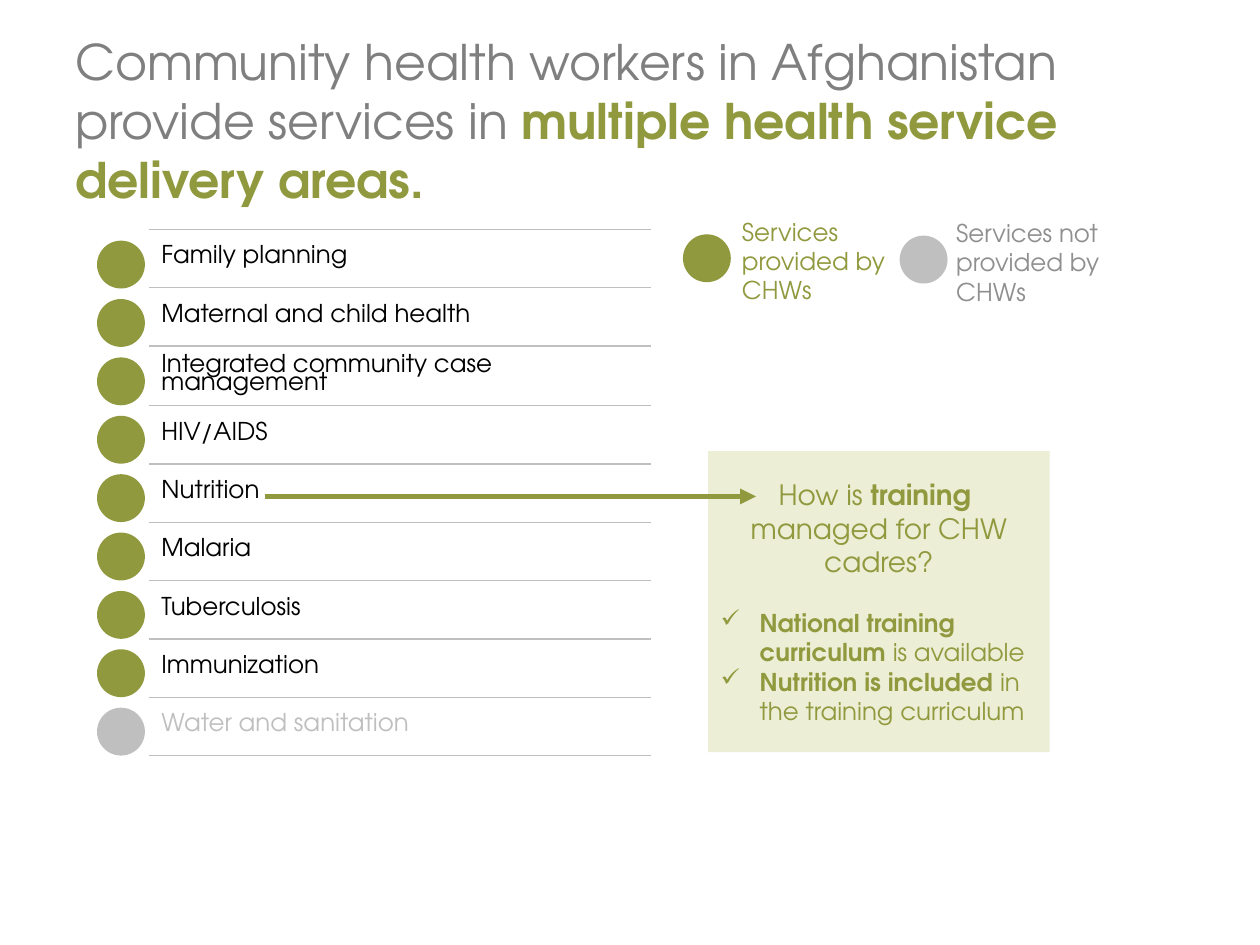
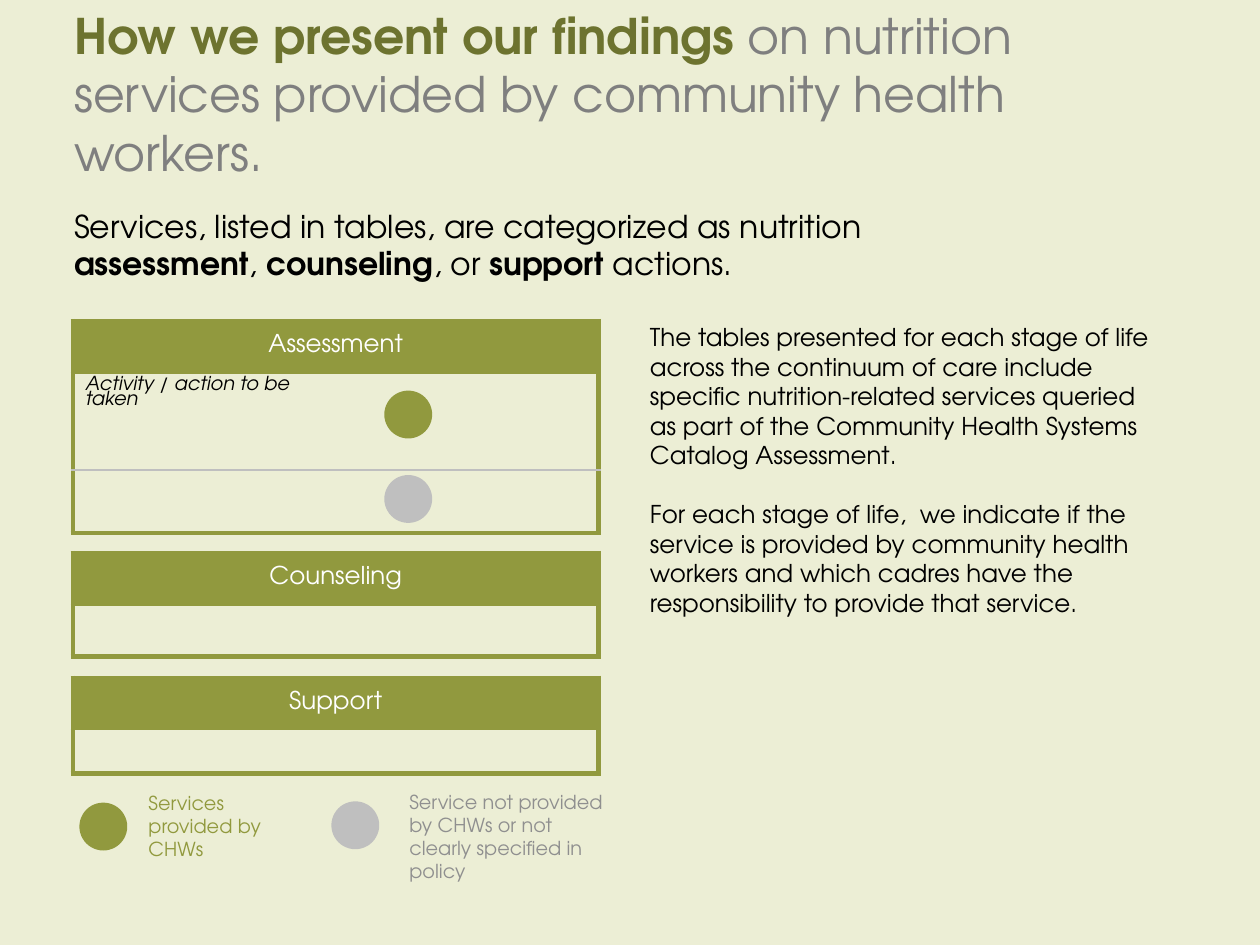
from dataclasses import dataclass

from pptx import Presentation
from pptx.dml.color import RGBColor
from pptx.enum.shapes import MSO_CONNECTOR, MSO_SHAPE
from pptx.enum.text import MSO_ANCHOR, PP_ALIGN
from pptx.oxml.ns import qn
from pptx.util import Inches, Pt
from lxml.etree import SubElement

WIDTH, HEIGHT = Inches(10), Inches(7.5)
COLUMN, ROW = WIDTH / 100, HEIGHT / 75  # grid of 100 columns by 75 rows
FONT = "TeX Gyre Adventor"
GREEN, DARK_GREEN, PALE_GREEN = "91993E", "6D732F", "ECEED5"
SILVER, GRAY, TITLE_GRAY = "BFBFBF", "8F8F8F", "7F7F7F"
BLACK, WHITE = "000000", "FFFFFF"
DOT_SIZE = 3.8
PLAIN_TABLE = "{2D5ABB26-0587-4C30-8999-92F81FD0307C}"
SERVICES = [
    "Family planning", "Maternal and child health",
    "Integrated community case management", "HIV/AIDS", "Nutrition",
    "Malaria", "Tuberculosis", "Immunization", "Water and sanitation",
]
NOT_PROVIDED = {"Water and sanitation"}


@dataclass
class Box:
    """An area measured in columns and rows of the slide grid."""
    left: float
    top: float
    width: float
    height: float

    def area(self, left, top, width, height):
        """Return a box placed relative to this one."""
        return Box(self.left + left, self.top + top, width, height)

    def lengths(self):
        return (round(self.left * COLUMN), round(self.top * ROW),
                round(self.width * COLUMN), round(self.height * ROW))


def rgb(color):
    return RGBColor.from_string(color)


def write(frame, *texts, size=14, color=BLACK, bold_color=None, italic=False,
          align=PP_ALIGN.LEFT, spacing=None, lead=0, gap=0, bullet=None):
    """Add one paragraph per text; words between ** marks are bold.

    lead is the space before the first added paragraph, gap before the others.
    """
    for index, text in enumerate(texts):
        paragraph = frame.paragraphs[0]
        if paragraph.runs:
            paragraph = frame.add_paragraph()
            paragraph.space_before = Pt(gap if index else lead)
        paragraph.alignment = align
        if spacing:
            paragraph.line_spacing = spacing
        if bullet:
            properties = paragraph._p.get_or_add_pPr()
            properties.set("marL", str(Inches(0.31)))
            properties.set("indent", str(-Inches(0.31)))
            SubElement(properties, qn("a:buChar")).set("char", bullet)
        for position, words in enumerate(text.split("**")):
            if not words:
                continue
            run = paragraph.add_run()
            run.text = words
            bold = position % 2 == 1
            font = run.font
            font.name, font.size, font.bold, font.italic = FONT, Pt(size), bold, italic
            font.color.rgb = rgb(bold_color if bold and bold_color else color)


def add_text(slide, box, *texts, anchor=MSO_ANCHOR.TOP, **text_format):
    frame = slide.shapes.add_textbox(*box.lengths()).text_frame
    frame.word_wrap = True
    frame.vertical_anchor = anchor
    write(frame, *texts, **text_format)


def add_title(slide, box, text, bold_color):
    add_text(slide, box, text, anchor=MSO_ANCHOR.MIDDLE, size=28,
             color=TITLE_GRAY, bold_color=bold_color)


def add_filled(slide, kind, box, color):
    shape = slide.shapes.add_shape(kind, *box.lengths())
    shape.shadow.inherit = False
    shape.fill.solid()
    shape.fill.fore_color.rgb = rgb(color)
    shape.line.fill.background()
    return shape


def add_dot(slide, box, left, top, color):
    add_filled(slide, MSO_SHAPE.OVAL, box.area(left, top, DOT_SIZE, DOT_SIZE), color)


def add_legend_item(slide, box, text, dot_color, text_color, indent, size):
    add_dot(slide, box, 0, (box.height - DOT_SIZE) / 2, dot_color)
    add_text(slide, box.area(indent, 0, box.width - indent, box.height),
             text, color=text_color, size=size)


def add_plain_table(slide, box, columns, rows):
    table = slide.shapes.add_table(len(rows), len(columns), *box.lengths()).table
    table.first_row = table.horz_banding = False
    table._tbl.tblPr.find(qn("a:tableStyleId")).text = PLAIN_TABLE
    for column, width in zip(table.columns, columns):
        column.width = round(width * COLUMN)
    for row, height in zip(table.rows, rows):
        row.height = round(height * ROW)
    for cell in table.iter_cells():
        cell.text_frame.paragraphs[0]._p.get_or_add_endParaRPr().set("sz", "1100")
    return table


def set_cell(cell, fill=None, **borders):
    """Set the fill, and borders given as side=(color, points) with sides L, R, T, B."""
    properties = cell._tc.get_or_add_tcPr()
    for side in "LRTB":
        if side in borders:
            color, points = borders[side]
            line = SubElement(properties, qn(f"a:ln{side}"), w=str(Pt(points)))
            solid = SubElement(line, qn("a:solidFill"))
            SubElement(solid, qn("a:srgbClr"), val=color)
    if fill:
        cell.fill.solid()
        cell.fill.fore_color.rgb = rgb(fill)
    else:
        cell.fill.background()


def add_service_list(slide, box):
    row_height = box.height / len(SERVICES)
    dot_column = 5.1
    table = add_plain_table(slide, box, [dot_column, box.width - dot_column],
                            [row_height] * len(SERVICES))
    rule = (SILVER, 1)
    for index, service in enumerate(SERVICES):
        missing = service in NOT_PROVIDED
        set_cell(table.cell(index, 0))
        cell = table.cell(index, 1)
        set_cell(cell, T=rule, B=rule)
        cell.vertical_anchor = MSO_ANCHOR.MIDDLE
        write(cell.text_frame, service, spacing=0.8,
              color=SILVER if missing else BLACK)
        add_dot(slide, box, 1, index * row_height + 0.9, SILVER if missing else GREEN)


def add_training_panel(slide, box):
    panel = add_filled(slide, MSO_SHAPE.RECTANGLE, box, PALE_GREEN)
    frame = panel.text_frame
    frame.word_wrap = True
    frame.vertical_anchor = MSO_ANCHOR.MIDDLE
    write(frame, "How is **training **", "managed for CHW cadres?",
          size=16, color=GREEN, align=PP_ALIGN.CENTER)
    write(frame, "**National training curriculum **is available",
          "**Nutrition is included** in the training curriculum",
          color=GREEN, bullet="✓", lead=17)


def add_arrow(slide, left, right, top):
    start_x, end_x, y = round(left * COLUMN), round(right * COLUMN), round(top * ROW)
    arrow = slide.shapes.add_connector(MSO_CONNECTOR.STRAIGHT, start_x, y, end_x, y)
    arrow.line.color.rgb = rgb(GREEN)
    arrow.line.width = Pt(3)
    SubElement(arrow.line._get_or_add_ln(), qn("a:tailEnd"), type="triangle")
    SubElement(arrow._element.spPr, qn("a:effectLst"))


def add_action_table(slide, box, heading, columns, rows):
    """Draw a table with a green heading row and a green frame."""
    table = add_plain_table(slide, box, columns, rows)
    thick, thin, divider = (GREEN, 3), (GREEN, 1), (SILVER, 1)
    last_row, last_column = len(rows) - 1, len(columns) - 1
    for row in range(len(rows)):
        for column in range(len(columns)):
            borders = {"T": (thick, thin, divider)[row]}
            if row == last_row:
                borders["B"] = thick
            else:
                borders["B"] = divider if row else thin
            if column == 0:
                borders["L"] = thick
            if column == last_column or row == 0:
                borders["R"] = thick
            set_cell(table.cell(row, column), None if row else GREEN, **borders)
    header = table.cell(0, 0)
    if last_column:
        header.merge(table.cell(0, last_column))
    header.vertical_anchor = MSO_ANCHOR.MIDDLE
    write(header.text_frame, heading, color=WHITE, align=PP_ALIGN.CENTER, spacing=0.8)
    return table


def add_assessment(slide, box):
    table = add_action_table(slide, box, "Assessment", [22.7, 19], [4.1, 7.7, 5])
    write(table.cell(1, 0).text_frame, "Activity / action to be taken",
          size=11, italic=True, spacing=0.8)
    add_dot(slide, box, 24.7, 5.5, GREEN)
    add_dot(slide, box, 24.7, 12.2, SILVER)


def add_slide(presentation, background):
    slide = presentation.slides.add_slide(presentation.slide_layouts[6])
    slide.background.fill.solid()
    slide.background.fill.fore_color.rgb = rgb(background)
    return slide


def build_services_slide(presentation):
    slide = add_slide(presentation, WHITE)
    add_title(slide, Box(5, 3.3, 88.3, 12.4),
              "Community health workers in Afghanistan provide services in "
              "**multiple health service delivery areas.**", GREEN)
    add_service_list(slide, Box(6.7, 18.2, 45, 41.7))
    add_legend_item(slide, Box(54.2, 16.7, 17.2, 7.6), "Services provided by CHWs",
                    GREEN, GREEN, indent=3.7, size=14)
    add_legend_item(slide, Box(71.4, 16.8, 17, 7.6), "Services not provided by CHWs",
                    SILVER, GRAY, indent=3.5, size=14)
    add_training_panel(slide, Box(56.2, 35.8, 27.1, 23.9))
    add_arrow(slide, 21, 60, 39.4)


def build_findings_slide(presentation):
    slide = add_slide(presentation, PALE_GREEN)
    add_title(slide, Box(4.9, 4, 87.6, 6.8),
              "**How we present our findings **on nutrition services provided by "
              "community health workers.", DARK_GREEN)
    add_text(slide, Box(4.9, 15.9, 77.6, 7.1),
             "Services, listed in tables, are categorized as nutrition "
             "**assessment**, **counseling**, or **support **actions.", size=18)
    add_text(slide, Box(50.6, 25.1, 41.9, 26.9),
             "The tables presented for each stage of life across the continuum of care "
             "include specific nutrition-related services queried as part of the "
             "Community Health Systems Catalog Assessment.",
             "For each stage of life,  we indicate if the service is provided by "
             "community health workers and which cadres have the responsibility to "
             "provide that service.", gap=17)
    add_assessment(slide, Box(5.8, 25.5, 41.7, 16.8))
    for heading, top, body in [("Counseling", 43.9, 4.1), ("Support", 53.8, 3.5)]:
        add_action_table(slide, Box(5.8, top, 41.7, 4.1 + body), heading,
                         [41.7], [4.1, body])
    add_legend_item(slide, Box(6.3, 62.3, 18, 6.6), "Services provided by CHWs",
                    GREEN, GREEN, indent=4.5, size=11)
    add_legend_item(slide, Box(26.3, 62.2, 22.7, 6.6),
                    "Service not provided by CHWs or not clearly specified in policy",
                    SILVER, GRAY, indent=5.2, size=11)


def main():
    presentation = Presentation()
    presentation.slide_width, presentation.slide_height = WIDTH, HEIGHT
    build_services_slide(presentation)
    build_findings_slide(presentation)
    presentation.save("out.pptx")


if __name__ == "__main__":
    main()
